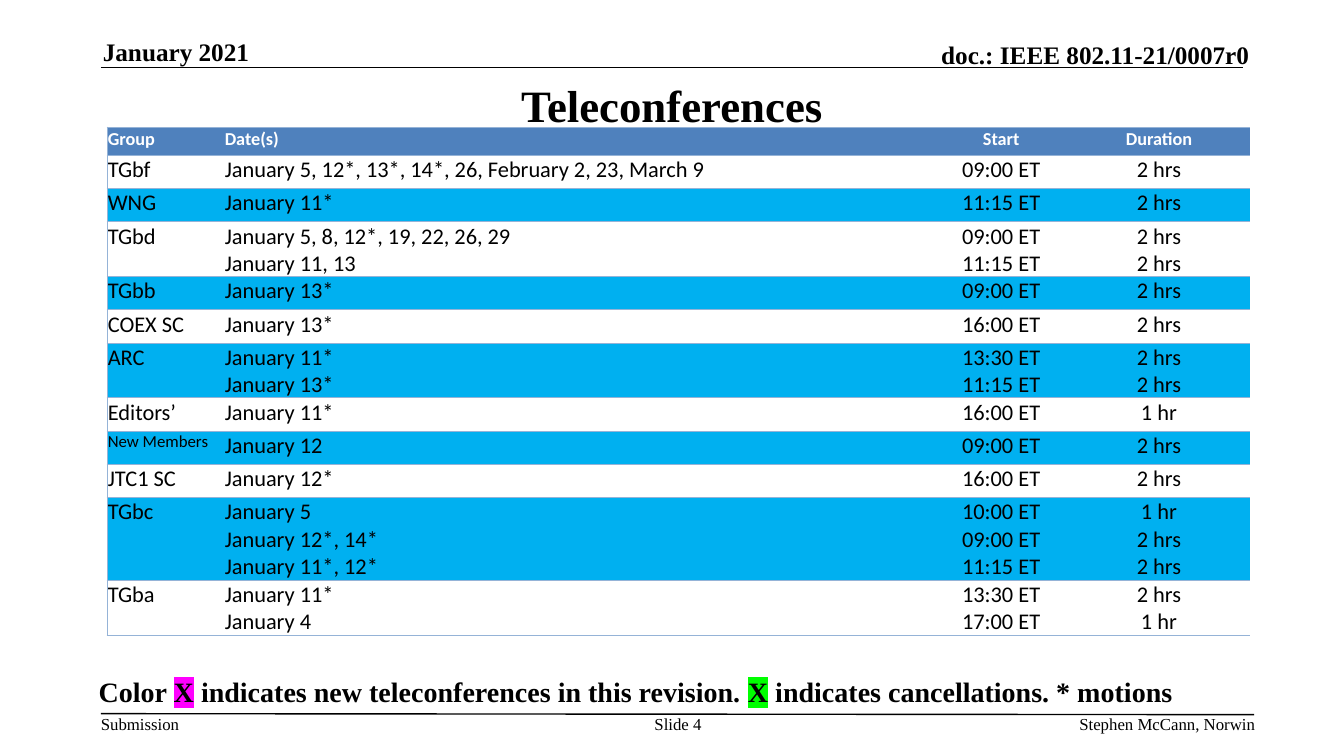
from dataclasses import dataclass

from lxml.etree import SubElement
from pptx import Presentation
from pptx.dml.color import RGBColor
from pptx.enum.shapes import MSO_CONNECTOR as Connector
from pptx.enum.text import MSO_ANCHOR as Anchor, PP_ALIGN as Align
from pptx.oxml.ns import qn
from pptx.util import Inches, Pt

SERIF, SANS = "Times New Roman", "Calibri"
BLACK, WHITE, HEADER_BLUE, ROW_BLUE, BORDER = "000000", "FFFFFF", "4F81BD", "00B0F0", "95B3D7"
NO_STYLE = "{2D5ABB26-0587-4C30-8999-92F81FD0307C}"
COLUMN_WIDTHS = (1.16, 7.05, 1.32, 1.81)
ROW_HEIGHTS = {1: 0.33, 2: 0.54, 3: 0.82}


@dataclass(frozen=True)
class Label:
    spans: tuple[str, ...]
    left: float
    top: float
    width: float
    height: float
    size: int
    bold: bool = True
    align: Align = Align.LEFT
    anchor: Anchor = Anchor.TOP
    insets: tuple[float, float] = (0, 0)
    highlights: tuple[str, ...] = ()


@dataclass(frozen=True)
class Group:
    name: str
    calls: tuple[tuple[str, str, str], ...]
    size: int = 16


LABELS = (
    Label(("January 2021",), 1.02, 0.36, 2.73, 0.3, 18, anchor=Anchor.BOTTOM),
    Label(("doc.: IEEE 802.11-21/0007r0",), 7.29, 0.39, 5.1, 0.3, 18,
          align=Align.RIGHT, anchor=Anchor.BOTTOM),
    Label(("Teleconferences",), 1, 0.75, 11.33, 0.58, 32,
          align=Align.CENTER, anchor=Anchor.MIDDLE, insets=(0.1, 0.05)),
    Label(("Submission",), 1, 7.08, 0.79, 0.2, 12, bold=False),
    Label(("Slide 4",), 6.34, 7.08, 0.77, 0.4, 12, bold=False, align=Align.CENTER),
    Label(("Stephen McCann, Norwin",), 7.81, 7.08, 4.64, 0.2, 12, bold=False, align=Align.RIGHT),
    Label(("Color ", "X", " indicates new teleconferences in this revision. ", "X",
           " indicates cancellations. * motions"), 0.88, 6.64, 11.79, 0.44, 20,
          insets=(0.1, 0.05), highlights=("", "FF00FF", "", "00FF00", "")),
)

GROUPS = (
    Group("TGbf", (("January 5, 12*, 13*, 14*, 26, February 2, 23, March 9", "09:00 ET", "2 hrs"),)),
    Group("WNG", (("January 11*", "11:15 ET", "2 hrs"),)),
    Group("TGbd", (("January 5, 8, 12*, 19, 22, 26, 29", "09:00 ET", "2 hrs"),
                   ("January 11, 13", "11:15 ET", "2 hrs"))),
    Group("TGbb", (("January 13*", "09:00 ET", "2 hrs"),)),
    Group("COEX SC", (("January 13*", "16:00 ET", "2 hrs"),)),
    Group("ARC", (("January 11*", "13:30 ET", "2 hrs"), ("January 13*", "11:15 ET", "2 hrs"))),
    Group("Editors’", (("January 11*", "16:00 ET", "1 hr"),)),
    Group("New Members", (("January 12", "09:00 ET", "2 hrs"),), size=12),
    Group("JTC1 SC", (("January 12*", "16:00 ET", "2 hrs"),)),
    Group("TGbc", (("January 5", "10:00 ET", "1 hr"), ("January 12*, 14*", "09:00 ET", "2 hrs"),
                   ("January 11*, 12*", "11:15 ET", "2 hrs"))),
    Group("TGba", (("January 11*", "13:30 ET", "2 hrs"), ("January 4", "17:00 ET", "1 hr"))),
)


def color(value: str) -> RGBColor:
    return RGBColor.from_string(value)


def style_font(font, name: str, size: int, ink: str, bold: bool) -> None:
    font.name, font.size, font.bold = name, Pt(size), bold
    font.color.rgb = color(ink)


def highlight(span, shade: str) -> None:
    properties = span.font._element if hasattr(span.font, "_element") else span._r.get_or_add_rPr()
    mark = SubElement(properties, qn("a:highlight"))
    SubElement(mark, qn("a:srgbClr"), val=shade)
    properties.find(qn("a:latin")).addprevious(mark)


def add_label(slide, label: Label) -> None:
    box = slide.shapes.add_textbox(Inches(label.left), Inches(label.top),
                                   Inches(label.width), Inches(label.height))
    frame = box.text_frame
    frame.word_wrap = True
    frame.vertical_anchor = label.anchor
    frame.margin_left = frame.margin_right = Inches(label.insets[0])
    frame.margin_top = frame.margin_bottom = Inches(label.insets[1])
    para = frame.paragraphs[0]
    para.alignment = label.align
    for index, text in enumerate(label.spans):
        span = para.add_run()
        span.text = text
        style_font(span.font, SERIF, label.size, BLACK, label.bold)
        if label.highlights and label.highlights[index]:
            highlight(span, label.highlights[index])


def add_rule(slide, left: float, top: float, right: float, bottom: float) -> None:
    rule = slide.shapes.add_connector(Connector.STRAIGHT, Inches(left), Inches(top),
                                      Inches(right), Inches(bottom))
    rule.line.color.rgb = color(BLACK)
    rule.line.width = Pt(1)
    SubElement(rule._element.spPr, qn("a:effectLst"))


def fill_cell(cell, column: int, text: str, size: int, ink: str, bold: bool, fill: str) -> None:
    cell.margin_left = cell.margin_right = cell.margin_top = Inches(0.01)
    cell.margin_bottom = 0
    cell.text_frame.text = text
    for para in cell.text_frame.paragraphs:
        para.alignment = Align.CENTER if column > 1 else Align.LEFT
        for span in para.runs:
            style_font(span.font, SANS, size, ink, bold)
    properties = cell._tc.get_or_add_tcPr()
    for side in ("lnL", "lnT", "lnB") if column == 0 else ("lnT", "lnB"):
        edge = SubElement(properties, qn(f"a:{side}"), w=str(Pt(0.5)))
        SubElement(SubElement(edge, qn("a:solidFill")), qn("a:srgbClr"), val=BORDER)
    if fill:
        cell.fill.solid()
        cell.fill.fore_color.rgb = color(fill)
    else:
        cell.fill.background()


def add_schedule(slide) -> None:
    heights = [0.28] + [ROW_HEIGHTS[len(group.calls)] for group in GROUPS]
    table = slide.shapes.add_table(len(heights), len(COLUMN_WIDTHS), Inches(1.06), Inches(1.26),
                                   Inches(sum(COLUMN_WIDTHS)), Inches(sum(heights))).table
    table.horz_banding = False
    table._tbl.tblPr.find(qn("a:tableStyleId")).text = NO_STYLE
    for column, width in zip(table.columns, COLUMN_WIDTHS):
        column.width = Inches(width)
    for row, height in zip(table.rows, heights):
        row.height = Inches(height)
    for column, heading in enumerate(("Group", "Date(s)", "Start", "Duration")):
        fill_cell(table.cell(0, column), column, heading, 13, WHITE, True, HEADER_BLUE)
    for row, group in enumerate(GROUPS, start=1):
        texts = [group.name] + ["\n".join(lines) for lines in zip(*group.calls)]
        for column, text in enumerate(texts):
            size = group.size if column == 0 else 16
            fill_cell(table.cell(row, column), column, text, size, BLACK, False,
                      ROW_BLUE if row % 2 == 0 else "")


def main() -> None:
    deck = Presentation()
    deck.slide_width, deck.slide_height = Inches(13.33), Inches(7.5)
    page = deck.slides.add_slide(deck.slide_layouts[6])
    add_rule(page, 1, 0.67, 12.33, 0.67)
    add_rule(page, 1, 7.08, 12.44, 7.09)
    for label in LABELS:
        add_label(page, label)
    add_schedule(page)
    deck.save("out.pptx")


if __name__ == "__main__":
    main()
